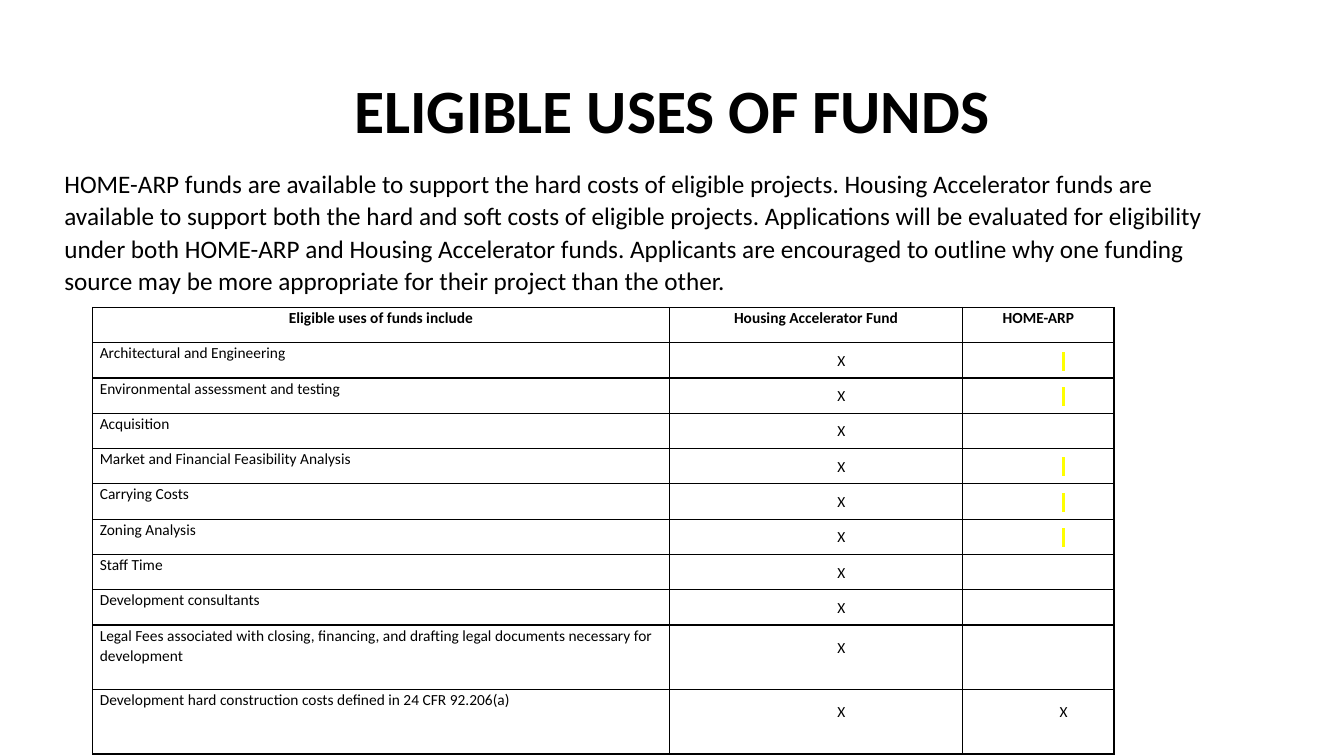
"""Build the slide that lists the eligible uses of two housing funds."""
from lxml import etree
from pptx import Presentation
from pptx.dml.color import RGBColor
from pptx.enum.text import MSO_ANCHOR, PP_ALIGN
from pptx.oxml.ns import qn
from pptx.util import Inches, Pt

LEFT, CENTER = PP_ALIGN.LEFT, PP_ALIGN.CENTER
TOP, MIDDLE = MSO_ANCHOR.TOP, MSO_ANCHOR.MIDDLE
BLACK = RGBColor(0, 0, 0)
YELLOW = RGBColor(255, 255, 0)
FONT = "Calibri"

TITLE = "ELIGIBLE USES OF FUNDS"
INTRO = (
    "HOME-ARP funds are available to support the hard costs of eligible projects. "
    "Housing Accelerator funds are available to support both the hard and soft costs "
    "of eligible projects. Applications will be evaluated for eligibility under both "
    "HOME-ARP and Housing Accelerator funds. Applicants are encouraged to outline why "
    "one funding source may be more appropriate for their project than the other."
)
HEADINGS = ("Eligible uses of funds include", "Housing Accelerator Fund", "HOME-ARP")
MARK = " "
USES = [
    ("Architectural and Engineering", "X", MARK),
    ("Environmental assessment and testing", "X", MARK),
    ("Acquisition", "X", ""),
    ("Market and Financial Feasibility Analysis", "X", MARK),
    ("Carrying Costs", "X", MARK),
    ("Zoning Analysis", "X", MARK),
    ("Staff Time", "X", ""),
    ("Development consultants", "X", ""),
    ("Legal Fees associated with closing, financing, and drafting legal documents "
     "necessary for development", "X", ""),
    ("Development hard construction costs defined in 24 CFR 92.206(a)", "X", "X"),
]
COLUMN_WIDTHS = (5.72, 2.91, 1.5)
ROW_HEIGHT, TALL_ROW_HEIGHT, TALL_ROWS = 0.35, 0.64, 2


def write(frame, text, *, size, bold=False, align=LEFT, anchor=TOP, spacing=1.07,
          indent=0, highlight=None):
    """Put one formatted paragraph into a text frame."""
    frame.word_wrap = True
    frame.vertical_anchor = anchor
    paragraph = frame.paragraphs[0]
    paragraph.alignment = align
    paragraph.line_spacing = spacing
    if indent:
        paragraph._p.get_or_add_pPr().set("marL", str(Inches(indent)))
    run = paragraph.add_run()
    run.text = text
    run.font.size, run.font.bold, run.font.name = Pt(size), bold, FONT
    run.font.color.rgb = BLACK
    if highlight:
        marker = etree.Element(qn("a:highlight"))
        etree.SubElement(marker, qn("a:srgbClr"), val=str(highlight))
        run.font._element.find(qn("a:solidFill")).addnext(marker)


def frame_cell(cell):
    """Give a cell thin black borders, no fill and tight margins."""
    cell.margin_left = cell.margin_right = Inches(0.07)
    cell.margin_top = cell.margin_bottom = 0
    properties = cell._tc.get_or_add_tcPr()
    for side in ("a:lnL", "a:lnR", "a:lnT", "a:lnB"):
        border = etree.SubElement(properties, qn(side), w=str(Pt(1)))
        fill = etree.SubElement(border, qn("a:solidFill"))
        etree.SubElement(fill, qn("a:srgbClr"), val=str(BLACK))
    cell.fill.background()


def add_uses_table(slide):
    """Add the table of uses, with the last rows taller than the others."""
    rows = [HEADINGS, *USES]
    first_tall = len(rows) - TALL_ROWS
    heights = [ROW_HEIGHT] * first_tall + [TALL_ROW_HEIGHT] * TALL_ROWS
    table = slide.shapes.add_table(
        len(rows), len(HEADINGS), Inches(0.92), Inches(3.05),
        Inches(sum(COLUMN_WIDTHS)), Inches(sum(heights))).table
    table.first_row = table.horz_banding = False
    for column, width in zip(table.columns, COLUMN_WIDTHS):
        column.width = Inches(width)
    for r, (texts, height) in enumerate(zip(rows, heights)):
        table.rows[r].height = Inches(height)
        for c, text in enumerate(texts):
            cell = table.cell(r, c)
            frame_cell(cell)
            if not text:
                continue
            check = r > 0 and c > 0
            write(cell.text_frame, text, size=11, bold=r == 0,
                  align=CENTER if r == 0 or check else LEFT,
                  indent=0.5 if check else 0,
                  highlight=YELLOW if text == MARK else None)
            cell.vertical_anchor = MIDDLE if check else TOP
            if check and r >= first_tall:
                cell.margin_bottom = Inches(0.2)


def main():
    """Build and save the slide."""
    deck = Presentation()
    deck.slide_width, deck.slide_height = Inches(13.33), Inches(7.5)
    slide = deck.slides.add_slide(deck.slide_layouts[6])
    title = slide.shapes.add_textbox(Inches(0.92), Inches(0.4), Inches(11.5), Inches(1.45))
    write(title.text_frame, TITLE, size=44, bold=True, align=CENTER, anchor=MIDDLE,
          spacing=0.9)
    intro = slide.shapes.add_textbox(Inches(0.54), Inches(1.6), Inches(11.5), Inches(4.76))
    write(intro.text_frame, INTRO, size=18)
    add_uses_table(slide)
    deck.save("out.pptx")


if __name__ == "__main__":
    main()
